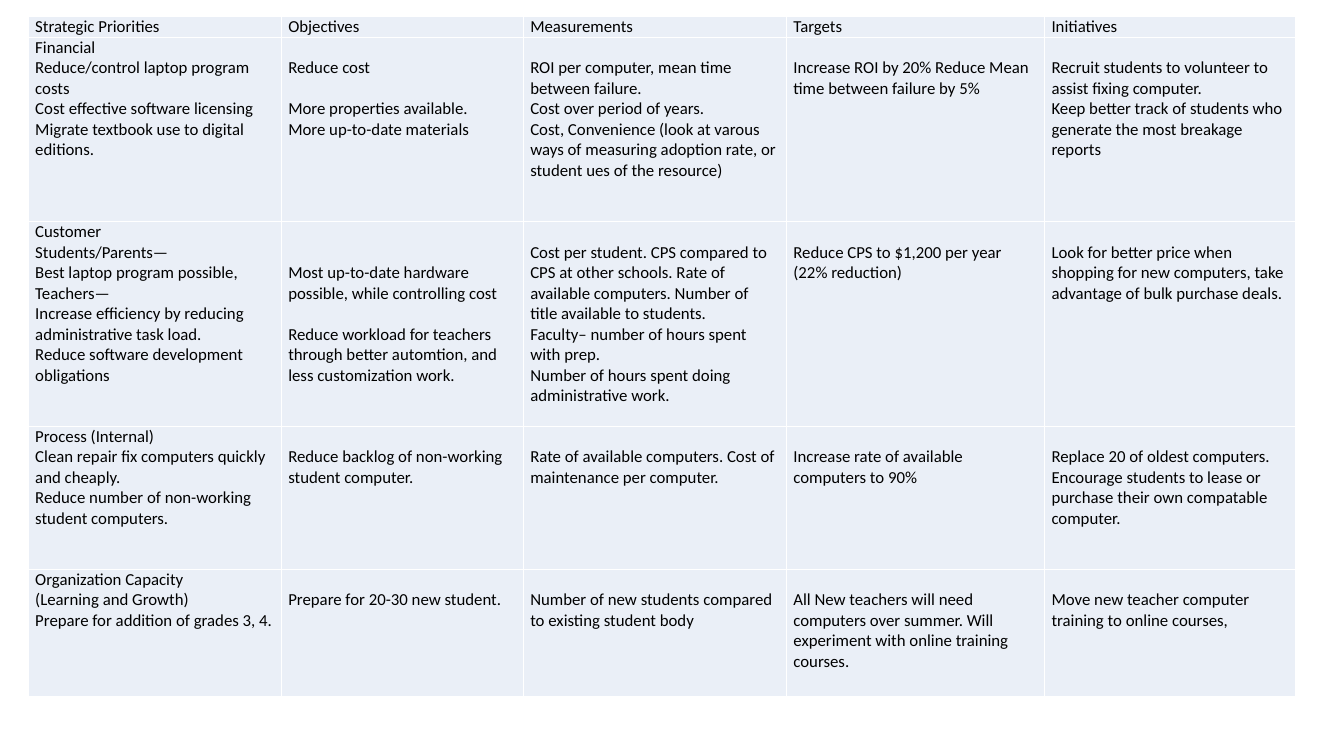
"""Build a one-slide balanced scorecard table for a school laptop program."""
import dataclasses

import lxml.etree
import pptx
import pptx.dml.color
import pptx.enum.text
import pptx.oxml.ns
import pptx.util

Inches = pptx.util.Inches
Pt = pptx.util.Pt
RGB = pptx.dml.color.RGBColor.from_string


@dataclasses.dataclass(frozen=True)
class Theme:
    font: str = "Calibri"
    size: int = 12
    line_height: float = 14.65
    text: str = "000000"
    fill: str = "EAEFF7"
    border: str = "FFFFFF"
    border_width: int = 1
    side_margin: float = 0.07


COLUMN_WIDTHS = [2.51, 2.4, 2.61, 2.56, 2.49]
ROW_HEIGHTS = [0.21, 1.83, 2.03, 1.42, 1.26]

SCORECARD = [
    ["Strategic Priorities", "Objectives", "Measurements", "Targets", "Initiatives"],
    [
        "Financial\nReduce/control laptop program costs\n"
        "Cost effective software licensing\n"
        "Migrate textbook use to digital editions.",
        "\nReduce cost\n\nMore properties available.\nMore up-to-date materials",
        "\nROI per computer, mean time between failure.\n"
        "Cost over period of years.\n"
        "Cost, Convenience (look at varous ways of measuring adoption rate, "
        "or student ues of the resource)",
        "\nIncrease ROI by 20% Reduce Mean time between failure by 5%",
        "\nRecruit students to volunteer to assist fixing computer.\n"
        "Keep better track of students who generate the most breakage reports",
    ],
    [
        "Customer\nStudents/Parents—\nBest laptop program possible,\nTeachers—\n"
        "Increase efficiency by reducing administrative task load.\n"
        "Reduce software development obligations",
        "\n\nMost up-to-date hardware possible, while controlling cost\n\n"
        "Reduce workload for teachers through better automtion, "
        "and less customization work.",
        "\nCost per student. CPS compared to CPS at other schools. "
        "Rate of available computers. Number of title available to students.\n"
        "Faculty– number of hours spent with prep.\n"
        "Number of hours spent doing administrative work.",
        "\nReduce CPS to $1,200 per year (22% reduction)",
        "\nLook for better price when shopping for new computers, "
        "take advantage of bulk purchase deals.",
    ],
    [
        "Process (Internal)\nClean repair fix computers quickly and cheaply.\n"
        "Reduce number of non-working student computers.",
        "\nReduce backlog of non-working student computer.",
        "\nRate of available computers. Cost of maintenance per computer.",
        "\nIncrease rate of available computers to 90%",
        "\nReplace 20 of oldest computers. Encourage students to lease or "
        "purchase their own compatable computer.",
    ],
    [
        "Organization Capacity\n(Learning and Growth)\n"
        "Prepare for addition of grades 3, 4.",
        "\nPrepare for 20-30 new student.",
        "\nNumber of new students compared to existing student body",
        "\nAll New teachers will need computers over summer. "
        "Will experiment with online training courses.",
        "\nMove new teacher computer training to online courses,",
    ],
]


class SlideBuilder:
    def __init__(self, slide, theme):
        self.slide = slide
        self.theme = theme

    def table(self, left, top, widths, heights, rows):
        frame = self.slide.shapes.add_table(
            len(heights), len(widths), Inches(left), Inches(top),
            Inches(sum(widths)), Inches(sum(heights)))
        table = frame.table
        table.first_row = False
        table.horz_banding = False
        for column, width in zip(table.columns, widths):
            column.width = Inches(width)
        for row, height, texts in zip(table.rows, heights, rows):
            row.height = Inches(height)
            for cell, text in zip(row.cells, texts):
                self.borders(cell)
                cell.fill.solid()
                cell.fill.fore_color.rgb = RGB(self.theme.fill)
                self.cell_text(cell, text)

    def cell_text(self, cell, text):
        theme = self.theme
        body = text.lstrip("\n")
        cell.margin_left = cell.margin_right = Inches(theme.side_margin)
        cell.margin_top = Pt((len(text) - len(body)) * theme.line_height)
        cell.margin_bottom = 0
        cell.vertical_anchor = pptx.enum.text.MSO_ANCHOR.TOP
        lines, gaps, gap = [], [], 0
        for line in body.split("\n"):
            if line:
                lines.append(line)
                gaps.append(gap)
                gap = 0
            else:
                gap += theme.line_height
        tf = cell.text_frame
        tf.text = "\n".join(lines)
        for p, gap in zip(tf.paragraphs, gaps):
            p.space_before = Pt(gap)
            for r in p.runs:
                r.font.name = theme.font
                r.font.size = Pt(theme.size)
                r.font.color.rgb = RGB(theme.text)

    def borders(self, cell):
        qn = pptx.oxml.ns.qn
        props = cell._tc.get_or_add_tcPr()
        for side in ("a:lnL", "a:lnR", "a:lnT", "a:lnB"):
            line = lxml.etree.SubElement(
                props, qn(side), w=str(Pt(self.theme.border_width)))
            fill = lxml.etree.SubElement(line, qn("a:solidFill"))
            lxml.etree.SubElement(fill, qn("a:srgbClr"), val=self.theme.border)


def main():
    prs = pptx.Presentation()
    prs.slide_width = Inches(13.33)
    prs.slide_height = Inches(7.5)
    s = prs.slides.add_slide(prs.slide_layouts[6])
    builder = SlideBuilder(s, Theme())
    builder.table(0.28, 0.16, COLUMN_WIDTHS, ROW_HEIGHTS, SCORECARD)
    prs.save("out.pptx")


if __name__ == "__main__":
    main()
